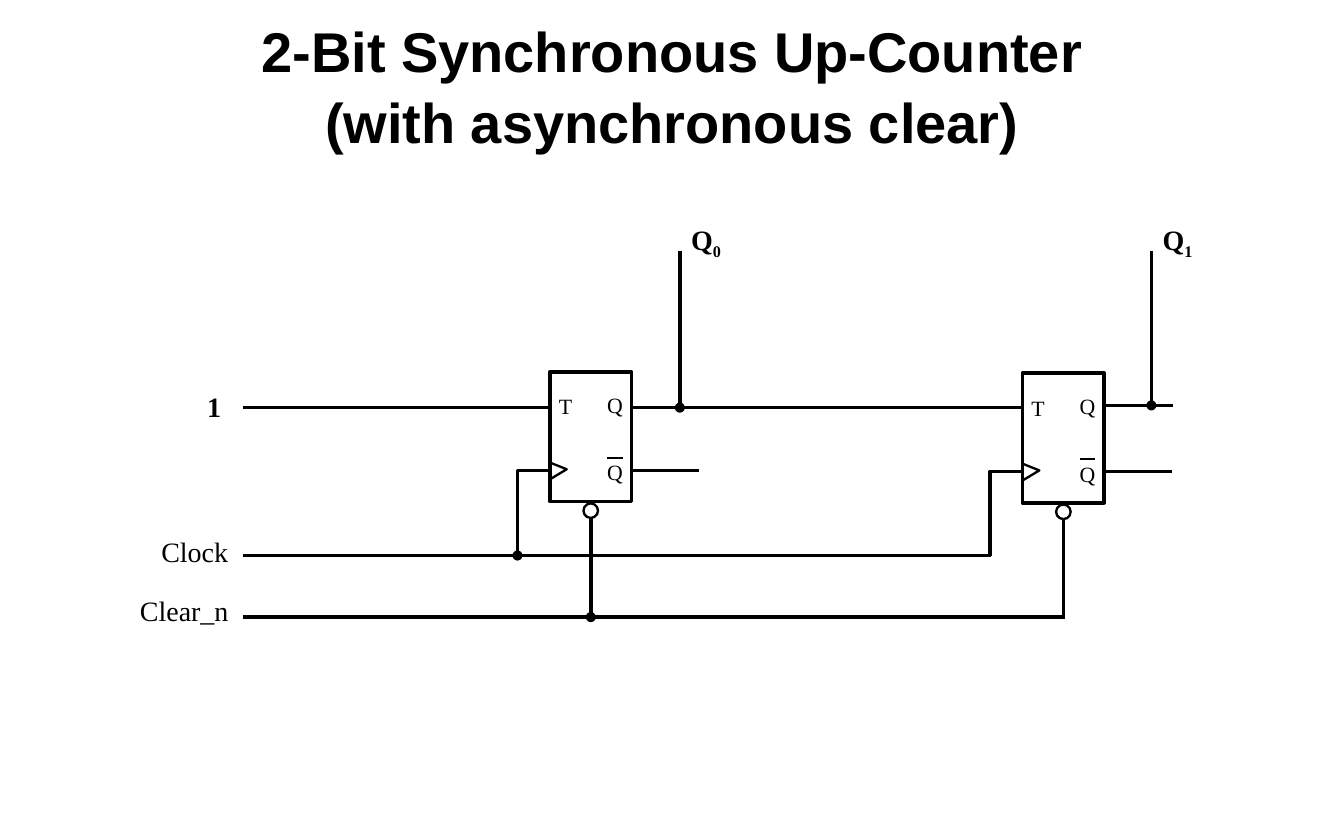
import pptx
import pptx.dml.color
import pptx.enum.shapes
import pptx.enum.text
import pptx.oxml.ns
import pptx.util
from lxml import etree
from pptx.util import Inches

BLACK = "000000"
WHITE = "FFFFFF"
WIRE = 2.25  # wire width in points
SERIF = "Times New Roman"


def colour(value):
    return pptx.dml.color.RGBColor.from_string(value)


def format_font(font, name, size, bold=False):
    font.name = name
    font.size = pptx.util.Pt(size)
    font.bold = bold
    font.color.rgb = colour(BLACK)


def add_label(slide, left, top, width, text, size, bold=False, subscript=""):
    shape = slide.shapes.add_textbox(
        Inches(left), Inches(top), Inches(width), Inches(size / 60))
    frame = shape.text_frame
    frame.margin_left = frame.margin_right = 0
    frame.margin_top = frame.margin_bottom = 0
    frame.word_wrap = False
    frame.auto_size = pptx.enum.text.MSO_AUTO_SIZE.SHAPE_TO_FIT_TEXT
    paragraph = frame.paragraphs[0]
    paragraph.text = text
    if subscript:
        run = paragraph.add_run()
        run.text = subscript
        run._r.get_or_add_rPr().set("baseline", "-25000")
    for run in paragraph.runs:
        format_font(run.font, SERIF, size, bold)


def add_wire(slide, start, end, width=WIRE):
    connector = slide.shapes.add_connector(
        pptx.enum.shapes.MSO_CONNECTOR.STRAIGHT,
        Inches(start[0]), Inches(start[1]), Inches(end[0]), Inches(end[1]))
    connector.line.color.rgb = colour(BLACK)
    connector.line.width = pptx.util.Pt(width)
    etree.SubElement(connector._element.spPr, pptx.oxml.ns.qn("a:effectLst"))


def add_outline(slide, points, width):
    corners = [(Inches(x), Inches(y)) for x, y in points]
    builder = slide.shapes.build_freeform(*corners[0])
    builder.add_line_segments(corners[1:], close=False)
    shape = builder.convert_to_shape()
    shape.shadow.inherit = False
    shape.fill.background()
    shape.line.color.rgb = colour(BLACK)
    shape.line.width = pptx.util.Pt(width)


def add_preset(slide, kind, box, fill, width):
    shape = slide.shapes.add_shape(kind, *[Inches(length) for length in box])
    shape.shadow.inherit = False
    shape.fill.solid()
    shape.fill.fore_color.rgb = colour(fill)
    shape.line.color.rgb = colour(BLACK)
    shape.line.width = pptx.util.Pt(width)


def add_circle(slide, x, y, diameter, fill, width):
    add_preset(slide, pptx.enum.shapes.MSO_SHAPE.OVAL,
               (x - diameter / 2, y - diameter / 2, diameter, diameter), fill, width)


def add_junction(slide, x, y):
    add_circle(slide, x, y, 0.08, BLACK, 0.75)


def add_title(slide, left, top, width, height):
    shape = slide.shapes.add_textbox(
        Inches(left), Inches(top), Inches(width), Inches(height))
    frame = shape.text_frame
    frame.word_wrap = True
    frame.margin_top = Inches(0.1)
    frame.text = "2-Bit Synchronous Up-Counter\n(with asynchronous clear)"
    frame.paragraphs[1].space_before = pptx.util.Pt(2)
    for paragraph in frame.paragraphs:
        paragraph.alignment = pptx.enum.text.PP_ALIGN.CENTER
        format_font(paragraph.runs[0].font, "Arial", 36, True)


def add_flip_flop(slide, left, top, width, height, clock_y, clear_y):
    # Body and pin names
    add_preset(slide, pptx.enum.shapes.MSO_SHAPE.RECTANGLE,
               (left, top, width, height), WHITE, WIRE)
    add_label(slide, left + 0.08, top + 0.19, 0.16, "T", 14)
    for offset in (0.18, 0.78):
        add_label(slide, left + 0.51, top + offset, 0.19, "Q", 14)
    add_wire(slide, (left + 0.51, top + 0.77), (left + 0.65, top + 0.77), 1.38)

    # Clock input, stepped up from the clock line
    pin_y = top + 0.88
    add_outline(slide, [(left, pin_y + 0.08), (left + 0.15, pin_y - 0.01),
                        (left, pin_y - 0.07)], 1.5)
    add_outline(slide, [(left - 0.29, clock_y), (left - 0.29, pin_y),
                        (left, pin_y)], WIRE)

    # Active-low clear input
    clear_x = left + width / 2
    bubble_y = top + height + 0.08
    add_wire(slide, (clear_x, bubble_y + 0.06), (clear_x, clear_y))
    add_circle(slide, clear_x, bubble_y, 0.13, WHITE, 1.5)

    # Inverted output
    add_wire(slide, (left + width, pin_y), (left + width + 0.6, pin_y))


def add_output_tap(slide, x, top, bottom, index):
    add_wire(slide, (x, top), (x, bottom))
    add_junction(slide, x, bottom)
    add_label(slide, x + 0.1, top - 0.25, 0.27, "Q", 18, True, index)


def add_counter(slide, left, top, right):
    width, height = 0.73, 1.16
    first, second = left + 2.74, left + 6.96
    data_y, clock_y, clear_y = top + 1.4, top + 2.72, top + 3.27
    body_y = data_y - 0.32

    # Data wires
    add_wire(slide, (left, data_y), (first, data_y))
    add_wire(slide, (first + width, data_y), (second, data_y))
    add_wire(slide, (second + width, data_y - 0.02), (right, data_y - 0.02))

    # Shared clock and clear lines
    add_wire(slide, (left, clock_y), (second - 0.28, clock_y))
    add_wire(slide, (left, clear_y), (second + width / 2 + 0.01, clear_y))

    for x, y in ((first, body_y), (second, body_y + 0.01)):
        add_flip_flop(slide, x, y, width, height, clock_y, clear_y)
    add_junction(slide, first - 0.29, clock_y)
    add_junction(slide, first + width / 2, clear_y)

    # Counter outputs
    add_output_tap(slide, first + 1.16, top, data_y, "0")
    add_output_tap(slide, second + 1.15, top, data_y - 0.02, "1")

    # Input names
    add_label(slide, left - 0.32, data_y - 0.16, 0.13, "1", 18, True)
    add_label(slide, left - 0.73, clock_y - 0.19, 0.6, "Clock", 18)
    add_label(slide, left - 0.92, clear_y - 0.21, 0.8, "Clear_n", 18)


def main():
    presentation = pptx.Presentation()
    presentation.slide_width = Inches(12)
    presentation.slide_height = Inches(7.5)
    slide = presentation.slides.add_slide(presentation.slide_layouts[6])
    add_title(slide, 1, 0.05, 10, 1.43)
    add_counter(slide, 2.17, 2.24, 10.47)
    presentation.save("out.pptx")


if __name__ == "__main__":
    main()
